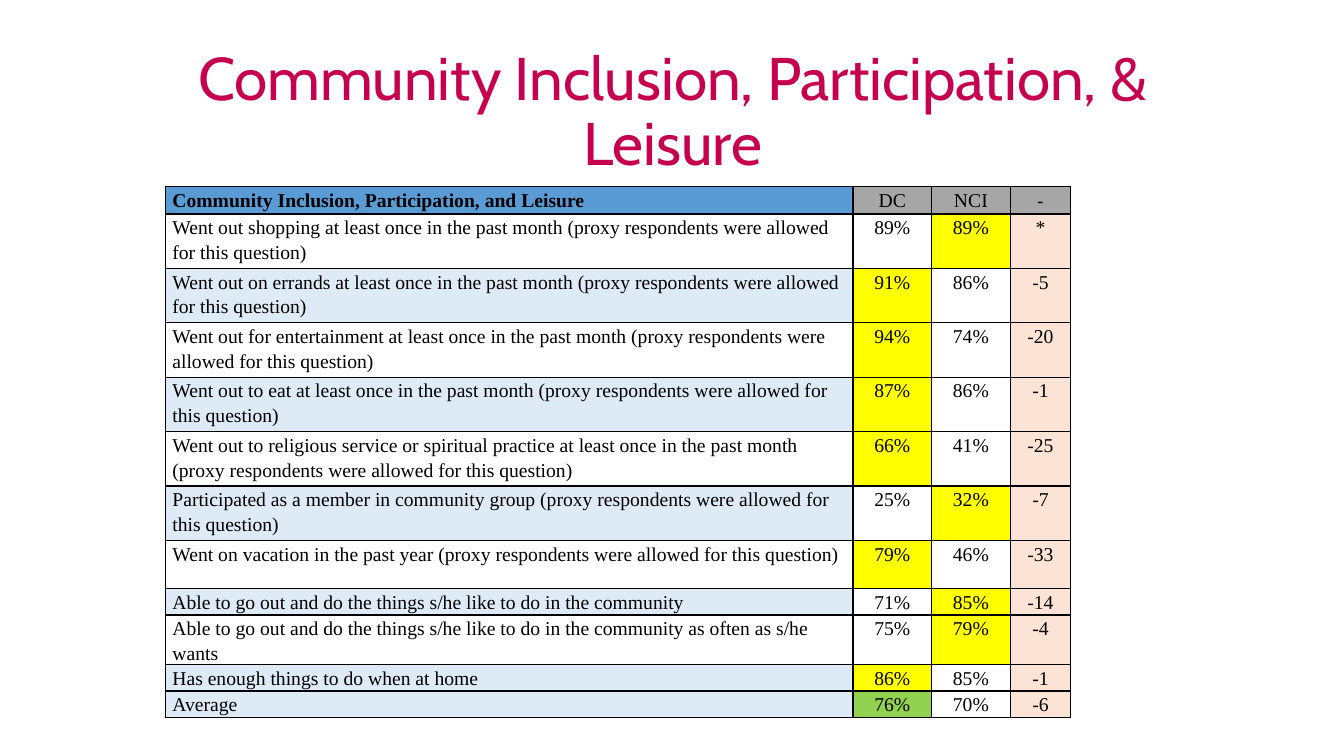
from dataclasses import dataclass

from lxml import etree
from pptx import Presentation
from pptx.dml.color import RGBColor
from pptx.enum import text as t
from pptx.oxml import ns
from pptx.util import Inches, Pt

TITLE = "Community Inclusion, Participation, & Leisure"
HEAD = ("Community Inclusion, Participation, and Leisure", "DC", "NCI", "-")
PROXY = " (proxy respondents were allowed for this question)"
# question, DC percent, NCI percent, difference, row height
ROWS = [
    ("Went out shopping at least once in the past month" + PROXY, 89, 89, "*", 0.54),
    ("Went out on errands at least once in the past month" + PROXY, 91, 86, "-5", 0.54),
    ("Went out for entertainment at least once in the past month" + PROXY, 94, 74, "-20", 0.54),
    ("Went out to eat at least once in the past month" + PROXY, 87, 86, "-1", 0.54),
    ("Went out to religious service or spiritual practice at least once in the past month" + PROXY,
     66, 41, "-25", 0.54),
    ("Participated as a member in community group" + PROXY, 25, 32, "-7", 0.54),
    ("Went on vacation in the past year" + PROXY, 79, 46, "-33", 0.48),
    ("Able to go out and do the things s/he like to do in the community", 71, 85, "-14", 0.26),
    ("Able to go out and do the things s/he like to do in the community as often as s/he wants",
     75, 79, "-4", 0.48),
    ("Has enough things to do when at home", 86, 85, "-1", 0.26),
    ("Average", 76, 70, "-6", 0.26),
]
COLS = (6.82, 0.78, 0.78, 0.6)
HEAD_H = 0.26


@dataclass(frozen=True)
class Theme:
    title: str = "C4004F"
    ink: str = "000000"
    plain: str = "FFFFFF"
    topic: str = "5B9BD5"
    head: str = "A6A6A6"
    band: str = "DEEAF6"
    best: str = "FFFF00"
    mean: str = "92D050"
    diff: str = "FBE4D5"
    title_font: str = "Cabin"
    font: str = "Times New Roman"
    dash_font: str = "Calibri"
    title_size: int = 43
    size: int = 14


LOOK = Theme()


def add_run(para, words, font, size, color, bold=False):
    run = para.add_run()
    run.text = words
    run.font.name, run.font.size, run.font.bold = font, Pt(size), bold
    run.font.color.rgb = RGBColor.from_string(color)


def add_edges(cell):
    """Draw a thin line on all four sides; lines must come before the fill."""
    props = cell._tc.get_or_add_tcPr()
    for pos, side in enumerate(("lnL", "lnR", "lnT", "lnB")):
        line = etree.Element(ns.qn("a:" + side), w=str(Pt(1)))
        fill = etree.SubElement(line, ns.qn("a:solidFill"))
        etree.SubElement(fill, ns.qn("a:srgbClr"), val=LOOK.ink)
        props.insert(pos, line)


def fill_cell(cell, words, color, font=LOOK.font, bold=False, center=True):
    cell.margin_left = cell.margin_right = Inches(0.07)
    cell.margin_top = cell.margin_bottom = 0
    cell.fill.solid()
    cell.fill.fore_color.rgb = RGBColor.from_string(color)
    add_edges(cell)
    para = cell.text_frame.paragraphs[0]
    para.line_spacing = 1.15
    para.alignment = t.PP_ALIGN.CENTER if center else t.PP_ALIGN.LEFT
    add_run(para, words, font, LOOK.size, LOOK.ink, bold)


def add_title(slide):
    box = slide.shapes.title
    box.left, box.top, box.width, box.height = map(Inches, (0.92, 0.4, 11.5, 1.45))
    frame = box.text_frame
    frame.word_wrap = True
    frame.auto_size = t.MSO_AUTO_SIZE.NONE
    frame.vertical_anchor = t.MSO_ANCHOR.MIDDLE
    para = frame.paragraphs[0]
    para.alignment = t.PP_ALIGN.CENTER
    para.line_spacing = 0.9
    add_run(para, TITLE, LOOK.title_font, LOOK.title_size, LOOK.title)


def add_scores(slide):
    tall = [HEAD_H] + [row[-1] for row in ROWS]
    area = map(Inches, (1.64, 1.85, sum(COLS), sum(tall)))
    table = slide.shapes.add_table(len(tall), len(COLS), *area).table
    for col, wide in zip(table.columns, COLS):
        col.width = Inches(wide)
    for row, high in zip(table.rows, tall):
        row.height = Inches(high)

    topic, *names, dash = HEAD
    fill_cell(table.cell(0, 0), topic, LOOK.topic, bold=True, center=False)
    for c, name in enumerate(names, 1):
        fill_cell(table.cell(0, c), name, LOOK.head)
    fill_cell(table.cell(0, 3), dash, LOOK.head, font=LOOK.dash_font)

    for r, (ask, dc, nci, diff, _) in enumerate(ROWS, 1):
        last = r == len(ROWS)
        mark = LOOK.mean if last else LOOK.best
        band = LOOK.band if last or r % 2 == 0 else LOOK.plain
        fill_cell(table.cell(r, 0), ask, band, center=False)
        fill_cell(table.cell(r, 1), f"{dc}%", mark if dc > nci else LOOK.plain)
        fill_cell(table.cell(r, 2), f"{nci}%", mark if nci >= dc else LOOK.plain)
        fill_cell(table.cell(r, 3), diff, LOOK.diff)


def main():
    deck = Presentation()
    deck.slide_width, deck.slide_height = Inches(13.33), Inches(7.5)
    slide = deck.slides.add_slide(deck.slide_layouts.get_by_name("Title Only"))
    add_title(slide)
    add_scores(slide)
    deck.save("out.pptx")


if __name__ == "__main__":
    main()
